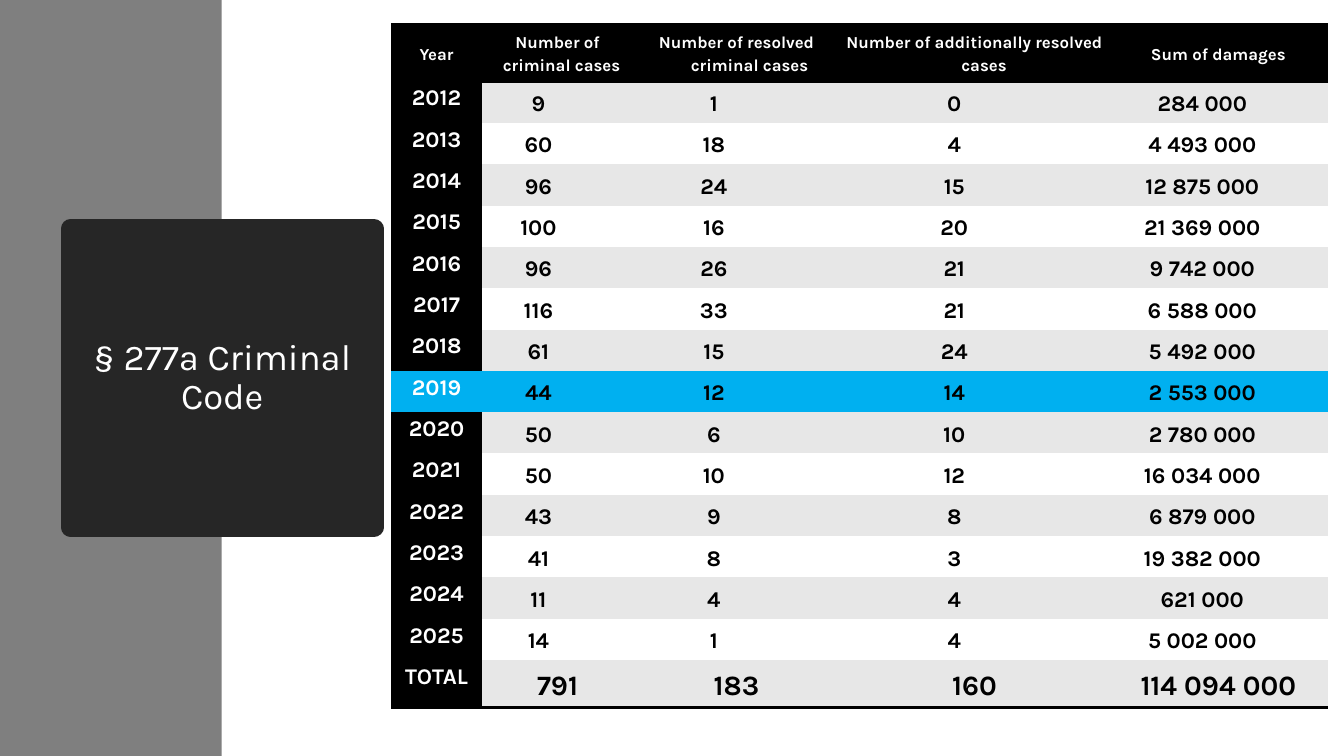
from lxml import etree
from pptx import Presentation
from pptx.dml.color import RGBColor
from pptx.enum import shapes, text
from pptx.oxml import ns
from pptx.util import Inches, Pt

BLACK = RGBColor(0x00, 0x00, 0x00)
WHITE = RGBColor(0xFF, 0xFF, 0xFF)
GRAY = RGBColor(0x7F, 0x7F, 0x7F)
CHARCOAL = RGBColor(0x26, 0x26, 0x26)
STRIPE = RGBColor(0xE7, 0xE7, 0xE7)
HIGHLIGHT = RGBColor(0x00, 0xB0, 0xF0)

PLAIN_TABLE_STYLE = "{2D5ABB26-0587-4C30-8999-92F81FD0307C}"
HIGHLIGHT_YEAR = "2019"
HANGING = -0.26
COLUMN_WIDTHS = [0.9, 1.5, 2.05, 2.67, 2.17]
HEADER_INDENTS = [0.26, 0.08, 0.26, 0.19, 0.23]
BODY_INDENTS = [0.26, 0, 0.05, 0, 0.26]
BODY_RIGHT_MARGINS = [0.05, 0.43, 0.5, 0.45, 0.37]

CASES = [
    ["Year", "Number of criminal cases", "Number of resolved criminal cases",
     "Number of additionally resolved cases", "Sum of damages"],
    ["2012", "9", "1", "0", "284 000"],
    ["2013", "60", "18", "4", "4 493 000"],
    ["2014", "96", "24", "15", "12 875 000"],
    ["2015", "100", "16", "20", "21 369 000"],
    ["2016", "96", "26", "21", "9 742 000"],
    ["2017", "116", "33", "21", "6 588 000"],
    ["2018", "61", "15", "24", "5 492 000"],
    ["2019", "44", "12", "14", "2 553 000"],
    ["2020", "50", "6", "10", "2 780 000"],
    ["2021", "50", "10", "12", "16 034 000"],
    ["2022", "43", "9", "8", "6 879 000"],
    ["2023", "41", "8", "3", "19 382 000"],
    ["2024", "11", "4", "4", "621 000"],
    ["2025", "14", "1", "4", "5 002 000"],
    ["TOTAL", "791", "183", "160", "114 094 000"],
]
TOTAL_ROW = len(CASES) - 1
ROW_HEIGHTS = [0.57] + [0.41] * (TOTAL_ROW - 1) + [0.47]


def apply(target, formats):
    for name, value in formats.items():
        setattr(target, name, value)


def add_border(cell, side):
    """Rule one side of a cell ("T" or "B") in black."""
    properties = cell._tc.get_or_add_tcPr()
    line = etree.Element(ns.qn(f"a:ln{side}"), w=str(Pt(2)))
    fill = etree.SubElement(line, ns.qn("a:solidFill"))
    etree.SubElement(fill, ns.qn("a:srgbClr"), val=str(BLACK))
    # Borders have to come before the cell fill
    properties.insert(len(properties) - 1, line)


class SlideBuilder:
    font_name = "Karla"

    def __init__(self, slide):
        self.slide = slide

    def paint(self, shape, color):
        shape.fill.solid()
        shape.fill.fore_color.rgb = color

    def set_text(self, paragraph, content, size, color, bold, formats):
        paragraph.text = content
        apply(paragraph, {"alignment": text.PP_ALIGN.CENTER,
                          "space_before": Pt(0), **formats})
        font = paragraph.runs[0].font
        apply(font, {"name": self.font_name, "size": Pt(size), "bold": bold})
        font.color.rgb = color

    def band(self, left, top, width, height, color):
        """Add a plain rectangle behind everything else."""
        band = self.slide.shapes.add_shape(
            shapes.MSO_SHAPE.RECTANGLE, *map(Inches, (left, top, width, height)))
        band.shadow.inherit = False
        self.paint(band, color)
        band.line.fill.background()
        self.slide.shapes._spTree.insert(2, band._element)

    def title(self, content, left, top, width, height):
        title = self.slide.shapes.title
        apply(title, {"left": Inches(left), "top": Inches(top),
                      "width": Inches(width), "height": Inches(height)})
        outline = etree.SubElement(title._element.spPr, ns.qn("a:prstGeom"),
                                   prst="ellipse")
        etree.SubElement(outline, ns.qn("a:avLst"))
        self.paint(title, CHARCOAL)
        title.line.color.rgb = CHARCOAL
        title.line.width = Pt(13.75)
        frame = title.text_frame
        apply(frame, {"word_wrap": True, "auto_size": text.MSO_AUTO_SIZE.NONE,
                      "vertical_anchor": text.MSO_ANCHOR.MIDDLE})
        self.set_text(frame.paragraphs[0], content, 26, WHITE, False,
                      {"line_spacing": 0.9})

    def cell(self, cell, content, row, column):
        is_header, is_total, is_label = row == 0, row == TOTAL_ROW, column == 0
        if CASES[row][0] == HIGHLIGHT_YEAR:
            background = HIGHLIGHT
        elif is_header or is_label:
            background = BLACK
        else:
            background = STRIPE if row % 2 else WHITE
        is_shifted = not (is_header or is_total)
        right = BODY_RIGHT_MARGINS[column] if is_shifted else 0.05
        top_anchored = is_label and not is_header
        apply(cell, {
            "margin_left": Inches(0.05), "margin_right": Inches(right),
            "margin_top": 0, "margin_bottom": 0,
            "vertical_anchor": (text.MSO_ANCHOR.TOP if top_anchored
                                else text.MSO_ANCHOR.MIDDLE)})
        self.paint(cell, background)

        if is_header:
            size = 12
        else:
            size = 20 if is_total and not is_label else 16
        paragraph = cell.text_frame.paragraphs[0]
        indents = HEADER_INDENTS if is_header else BODY_INDENTS
        properties = paragraph._p.get_or_add_pPr()
        properties.set("marL", str(Inches(indents[column])))
        properties.set("indent", str(Inches(HANGING)))
        self.set_text(paragraph, content, size,
                      WHITE if is_header or is_label else BLACK, True,
                      {"line_spacing": 1.15, "space_after": Pt(8)})
        for side in "TB" if is_header else "B" if is_total else "":
            add_border(cell, side)

    def table(self, left, top):
        frame = self.slide.shapes.add_table(
            len(CASES), len(COLUMN_WIDTHS), Inches(left), Inches(top),
            Inches(sum(COLUMN_WIDTHS)), Inches(sum(ROW_HEIGHTS)))
        table = frame.table
        apply(table, {"first_row": False, "horz_banding": False})
        table._tbl.tblPr.find(ns.qn("a:tableStyleId")).text = PLAIN_TABLE_STYLE
        for column, width in zip(table.columns, COLUMN_WIDTHS):
            column.width = Inches(width)
        for row, height in zip(table.rows, ROW_HEIGHTS):
            row.height = Inches(height)
        for r, record in enumerate(CASES):
            for c, content in enumerate(record):
                self.cell(table.cell(r, c), content, r, c)


def main():
    deck = Presentation()
    apply(deck, {"slide_width": Inches(13.33), "slide_height": Inches(7.5)})
    builder = SlideBuilder(deck.slides.add_slide(deck.slide_layouts[5]))
    builder.band(0, 0, 2.2, 7.5, GRAY)
    builder.title("§ 277a Criminal Code", 0.7, 2.27, 3.01, 2.96)
    builder.table(3.88, 0.24)
    deck.save("out.pptx")


if __name__ == "__main__":
    main()
